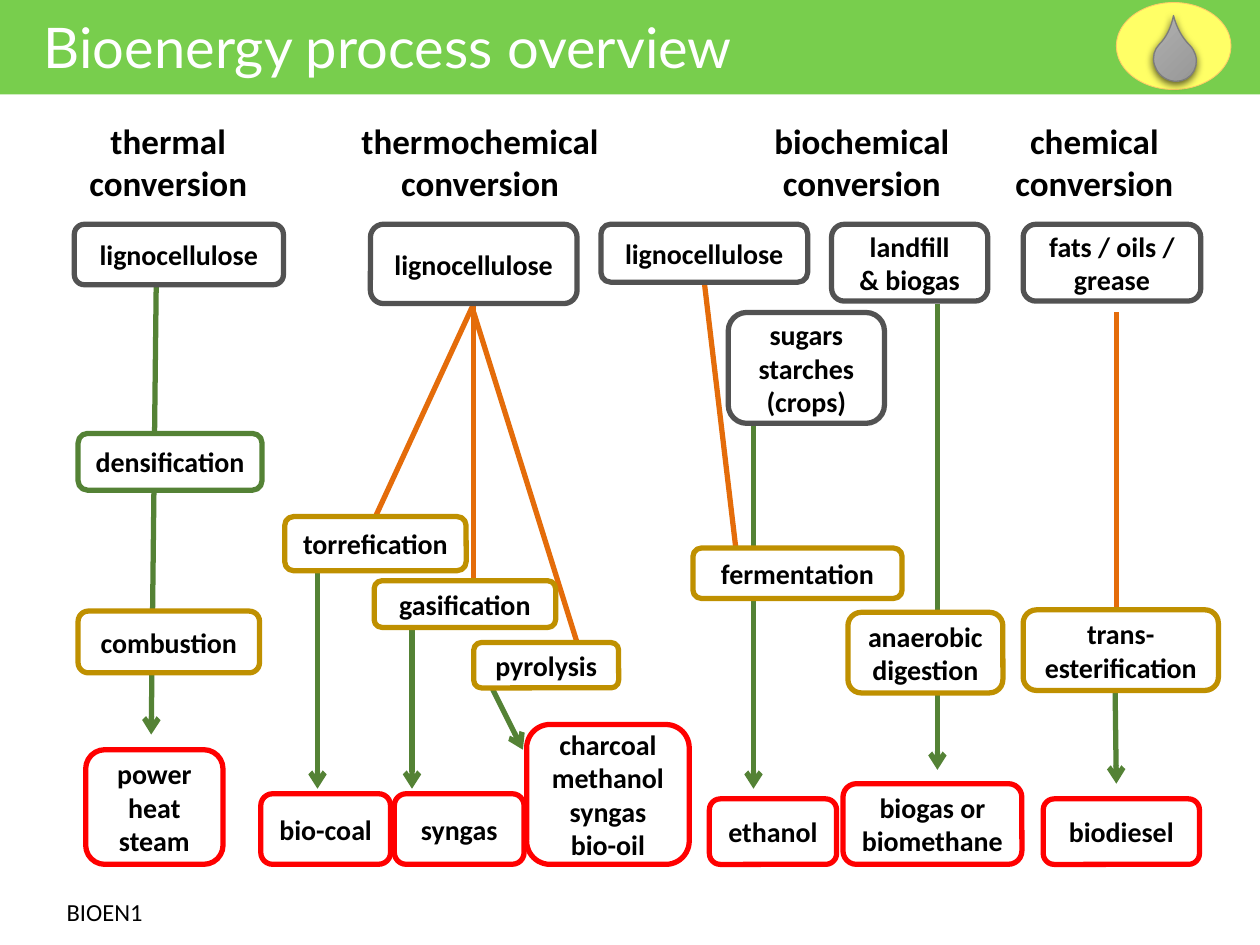
from lxml.etree import SubElement
from pptx import Presentation
from pptx.dml.color import RGBColor
from pptx.enum.shapes import MSO_CONNECTOR, MSO_SHAPE
from pptx.enum.text import MSO_ANCHOR, PP_ALIGN
from pptx.oxml.ns import qn
from pptx.util import Cm, Pt

WHITE = RGBColor(0xFF, 0xFF, 0xFF)
BLACK = RGBColor(0, 0, 0)
BANNER = RGBColor(0x78, 0xCE, 0x4D)
GRAY = RGBColor(0x52, 0x52, 0x52)
GREEN = RGBColor(0x54, 0x82, 0x35)
GOLD = RGBColor(0xBF, 0x90, 0x00)
RED = RGBColor(0xFF, 0, 0)
ORANGE = RGBColor(0xE4, 0x6C, 0x0A)
YELLOW = RGBColor(0xFF, 0xFF, 0x66)
YELLOW_EDGE = RGBColor(0xFF, 0xCC, 0x66)
DROP_LIGHT = RGBColor(0xAF, 0xAF, 0xAF)
DROP_DARK = RGBColor(0x93, 0x93, 0x93)
DROP_EDGE = RGBColor(0x7C, 0x7C, 0x7C)

# Content; places are in inches
FEED_TOP, PRODUCT_BOTTOM = 1.78, 6.86

HEADINGS = [  # text, left, width
    ("thermal\nconversion", 0.59, 1.49),
    ("thermochemical conversion", 2.71, 2.2),
    ("biochemical conversion", 5.84, 2),
    ("chemical conversion", 7.84, 1.69),
]
FEEDSTOCKS = {  # key: paragraphs, left, width, height
    "thermal wood": (["lignocellulose"], 0.59, 1.66, 0.48),
    "thermochemical wood": (["lignocellulose"], 2.94, 1.64, 0.63),
    "biochemical wood": (["lignocellulose"], 4.77, 1.64, 0.46),
    "landfill": (["landfill\n& biogas"], 6.6, 1.24, 0.61),
    "fats": (["fats / oils / grease"], 8.12, 1.41, 0.61),
}
PROCESSES = {  # key: paragraphs, left, top, width, height, outline, fill
    "crops": (["sugars\nstarches\n(crops)"], 5.78, 2.48, 1.24, 0.88, GRAY, None),
    "densification": (["densification"], 0.62, 3.44, 1.46, 0.45, GREEN, WHITE),
    "combustion": (["combustion"], 0.62, 4.85, 1.44, 0.49, GOLD, WHITE),
    "gasification": (["gasification"], 2.97, 4.61, 1.44, 0.37, GOLD, WHITE),
    "pyrolysis": (["pyrolysis"], 3.76, 5.1, 1.15, 0.36, GOLD, WHITE),
    "torrefication": (["torrefication"], 2.26, 4.1, 1.44, 0.43, GOLD, WHITE),
    "fermentation": (["fermentation"], 5.5, 4.35, 1.66, 0.4, GOLD, WHITE),
    "digestion": (["anaerobic\ndigestion"], 6.73, 4.86, 1.23, 0.64, GOLD, WHITE),
    "esterification": (["trans-esterification"], 8.12, 4.84, 1.55, 0.64, GOLD, None),
}
PRODUCTS = {  # key: paragraphs, left, width, height
    "power": (["power\nheat", "steam"], 0.68, 1.09, 0.91),
    "bio-coal": (["bio-coal"], 2.07, 1.03, 0.56),
    "syngas": (["syngas"], 3.13, 1.03, 0.56),
    "bio-oil": (["charcoal", "methanol", "syngas", "bio-oil"], 4.18, 1.29, 1.11),
    "ethanol": (["ethanol"], 5.63, 1.01, 0.52),
    "biogas": (["biogas or\nbiomethane"], 6.69, 1.42, 0.64),
    "biodiesel": (["biodiesel"], 8.28, 1.24, 0.52),
}
ARROWS = [  # from x, y, to x, y
    (1.24, 2.26, 1.2, 5.83),
    (2.52, 4.18, 2.52, 6.26),
    (3.27, 4.83, 3.27, 6.26),
    (3.91, 5.47, 4.15, 5.95),
    (5.98, 3.37, 5.98, 6.26),
    (7.44, 2.41, 7.44, 6.11),
    (8.85, 5.47, 8.86, 6.22),
]
BRANCHES = [  # from x, y, to x, y, box joined at its bottom, box joined at its top
    (3.76, 2.41, 2.97, 4.1, "thermochemical wood", "torrefication"),
    (3.76, 2.41, 3.76, 4.61, "thermochemical wood", None),
    (3.76, 2.48, 4.58, 5.1, None, None),
    (5.59, 2.25, 5.84, 4.35, "biochemical wood", None),
    (8.86, 2.48, 8.86, 4.83, None, None),
]


def inches(*values):
    return [Cm(value * 2.54) for value in values]


def write(box, paragraphs, size=16, font="Calibri", color=BLACK, bold=True,
          align=PP_ALIGN.CENTER, anchor=MSO_ANCHOR.MIDDLE, wrap=True):
    frame = box.text_frame
    frame.word_wrap = wrap
    frame.vertical_anchor = anchor
    for index, text in enumerate(paragraphs):
        para = frame.add_paragraph() if index else frame.paragraphs[0]
        para.text = text
        para.alignment = align
        for span in para.runs:
            span.font.size, span.font.name, span.font.bold = Pt(size), font, bold
            span.font.color.rgb = color


def add_shape(page, kind, place, fill=None, outline=None, weight=3):
    shape = page.shapes.add_shape(kind, *inches(*place))
    shape.shadow.inherit = False
    if fill is None:
        shape.fill.background()
    else:
        shape.fill.solid()
        shape.fill.fore_color.rgb = fill
    if outline is None:
        shape.line.fill.background()
    else:
        shape.line.color.rgb = outline
        shape.line.width = Pt(weight)
    return shape


def add_box(page, paragraphs, place, outline, fill=None):
    box = add_shape(page, MSO_SHAPE.ROUNDED_RECTANGLE, place, fill, outline)
    write(box, paragraphs)
    return box


def add_label(page, text, place, **style):
    label = page.shapes.add_textbox(*inches(*place))
    write(label, [text], anchor=MSO_ANCHOR.TOP, **style)


def add_line(page, ends, color, arrow=False):
    line = page.shapes.add_connector(MSO_CONNECTOR.STRAIGHT, *inches(*ends))
    line.line.color.rgb = color
    line.line.width = Pt(3)
    if arrow:
        SubElement(line.line._get_or_add_ln(), qn("a:tailEnd"), type="arrow")
    SubElement(line._element.spPr, qn("a:effectLst"))
    return line


def add_drop(page):
    add_shape(page, MSO_SHAPE.OVAL, (8.86, 0.02, 0.91, 0.69), YELLOW, YELLOW_EDGE, 0.5)
    drop = add_shape(page, MSO_SHAPE.TEAR, (9.16, 0.3, 0.33, 0.35), DROP_DARK, DROP_EDGE, 0.75)
    drop.rotation = 314.8
    drop.adjustments[0] = 1.465
    drop.fill.gradient()
    drop.fill.gradient_angle = 270
    for stop, color in zip(drop.fill.gradient_stops, (DROP_LIGHT, DROP_DARK)):
        stop.color.rgb = color
    # Soft shadow straight below the drop
    effects = drop._element.spPr.find(qn("a:effectLst"))
    shadow = SubElement(effects, qn("a:outerShdw"), blurRad=str(Pt(4.5)),
                        dist=str(Pt(1.5)), dir="5400000", rotWithShape="0")
    shade = SubElement(shadow, qn("a:srgbClr"), val="000000")
    SubElement(shade, qn("a:alpha"), val="63000")


def main():
    deck = Presentation()
    deck.slide_width, deck.slide_height = inches(10, 7.5)
    page = deck.slides.add_slide(deck.slide_layouts[6])

    # Banner, title and footer
    add_shape(page, MSO_SHAPE.RECTANGLE, (0, 0, 10.01, 0.75), BANNER)
    add_label(page, "Bioenergy process overview", (0.25, 0.05, 6.11, 0.64), size=32,
              font="Lato", color=WHITE, bold=False, align=PP_ALIGN.LEFT, wrap=False)
    add_label(page, "BIOEN1", (0.43, 7.07, 0.81, 0.34), size=14, bold=False,
              align=PP_ALIGN.LEFT, wrap=False)
    for text, left, width in HEADINGS:
        add_label(page, text, (left, 0.9, width, 0.77), size=20)

    # Lines lie behind the boxes
    for ends in ARROWS:
        add_line(page, ends, GREEN, arrow=True)
    branches = [add_line(page, ends, ORANGE) for *ends, _, _ in BRANCHES]

    # Boxes: feedstocks share a top edge, products share a bottom edge
    boxes = {}
    for key, (text, left, width, height) in FEEDSTOCKS.items():
        boxes[key] = add_box(page, text, (left, FEED_TOP, width, height), GRAY)
    for key, (text, *place, outline, fill) in PROCESSES.items():
        boxes[key] = add_box(page, text, place, outline, fill)
    for key, (text, left, width, height) in PRODUCTS.items():
        place = (left, PRODUCT_BOTTOM - height, width, height)
        boxes[key] = add_box(page, text, place, RED)

    # Join the branches to their boxes
    for line, (*_, source, target) in zip(branches, BRANCHES):
        if source:
            line.begin_connect(boxes[source], 2)
        if target:
            line.end_connect(boxes[target], 0)

    add_drop(page)
    deck.save("out.pptx")


if __name__ == "__main__":
    main()
